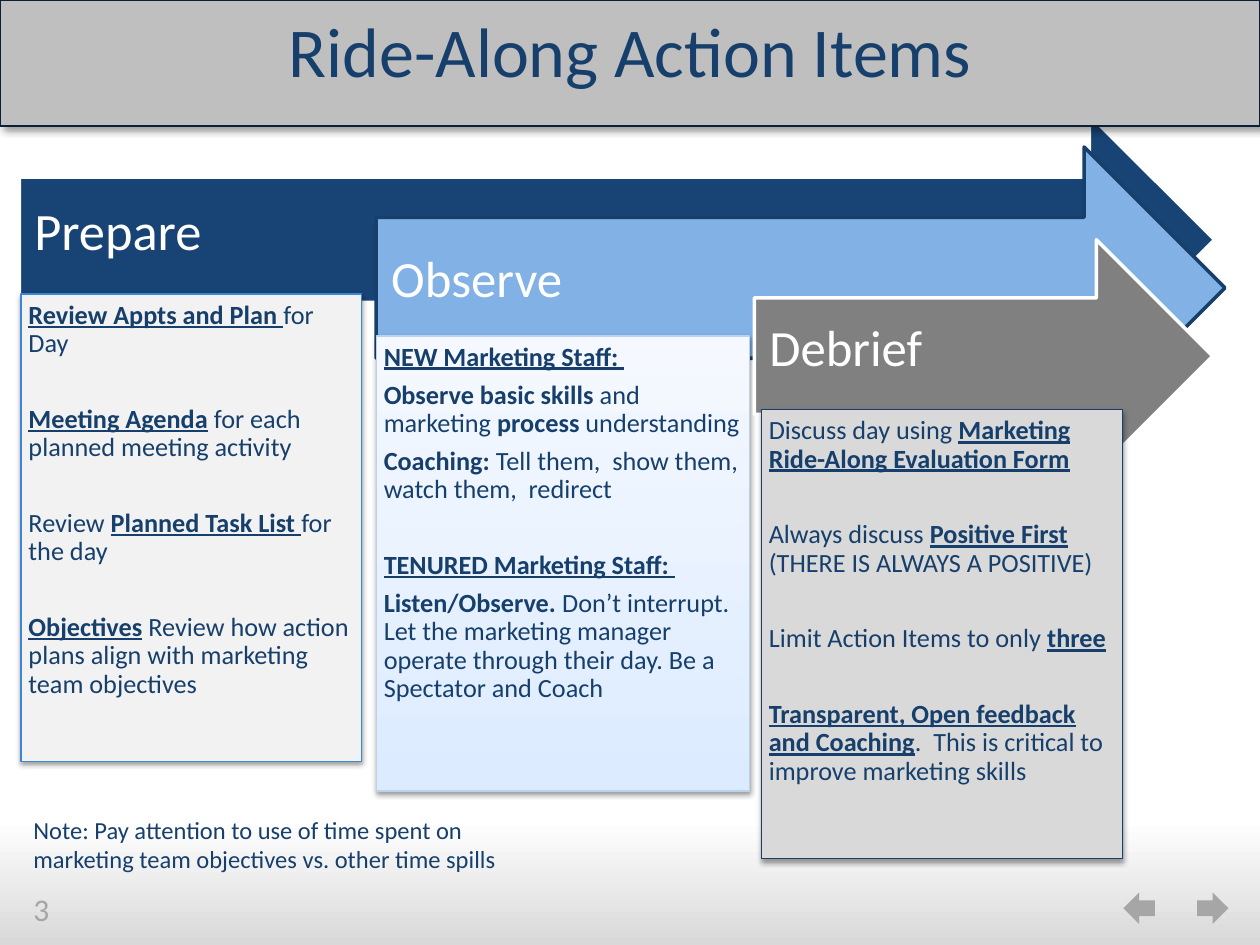
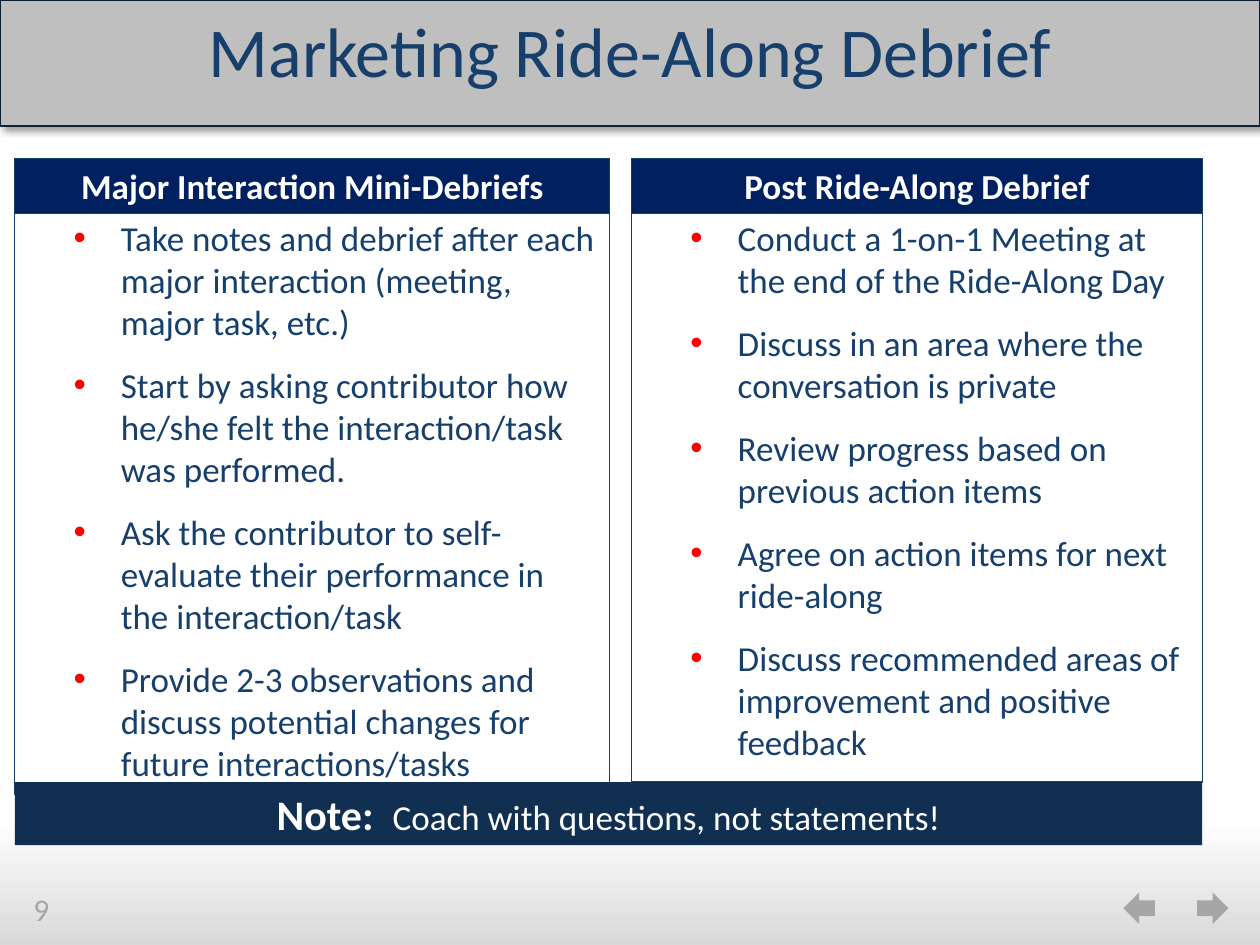
from lxml.etree import SubElement
from pptx import Presentation
from pptx.dml.color import RGBColor
from pptx.enum.shapes import MSO_SHAPE as SHAPE
from pptx.enum.text import MSO_ANCHOR as ANCHOR, PP_ALIGN as ALIGN
from pptx.oxml.ns import qn
from pptx.util import Pt

FONT = "Calibri"
NAVY, WHITE, ARROW_GREY = "163F6C", "FFFFFF", "A6A6A6"
PANEL_SHADOW = (3.1, 1.6, 90, 38)
TITLE_SHADOW = (4, 3, 45, 40)
SMALL_GAP, WIDE_GAP = 5.5, 27


def rgb(value):
    """Turn a hex string into a colour."""
    return RGBColor.from_string(value)


def add_shadow(sp, blur, dist, angle, alpha):
    """Give a shape a black outer shadow."""
    effects = sp._element.spPr.find(qn("a:effectLst"))
    outer = SubElement(effects, qn("a:outerShdw"), blurRad=str(Pt(blur)), dist=str(Pt(dist)),
                       dir=str(angle * 60000), rotWithShape="0")
    color = SubElement(outer, qn("a:srgbClr"), val="000000")
    SubElement(color, qn("a:alpha"), val=str(alpha * 1000))


def add_box(s, kind, box, fill=None, line=None, weight=0.75, shadow=None):
    """Add a preset shape; a pair of fills runs from top to bottom."""
    sp = s.shapes.add_shape(kind, *map(Pt, box))
    sp.shadow.inherit = False
    if isinstance(fill, tuple):
        sp.fill.gradient()
        sp.fill.gradient_angle = 270
        for stop, color in zip(sp.fill.gradient_stops, fill):
            stop.color.rgb = rgb(color)
    elif fill:
        sp.fill.solid()
        sp.fill.fore_color.rgb = rgb(fill)
    else:
        sp.fill.background()
    if line:
        sp.line.color.rgb = rgb(line)
        sp.line.width = Pt(weight)
    else:
        sp.line.fill.background()
    if shadow:
        add_shadow(sp, *shadow)
    return sp


def set_frame(sp, anchor=ANCHOR.TOP, insets=(7.2, 3.6, 7.2, 3.6)):
    """Prepare the text frame of a shape and return it."""
    tf = sp.text_frame
    tf.word_wrap = True
    tf.vertical_anchor = anchor
    tf.margin_left, tf.margin_top, tf.margin_right, tf.margin_bottom = map(Pt, insets)
    return tf


def add_para(tf, runs, size, color=NAVY, align=ALIGN.LEFT, spacing=None, before=0):
    """Write one paragraph from (text, style) runs, where b is bold and u underlined."""
    first = not tf.paragraphs[0].runs
    p = tf.paragraphs[0] if first else tf.add_paragraph()
    p.alignment = align
    p.space_before = Pt(0 if first else before)
    if spacing:
        p.line_spacing = spacing
    for text, style, *own_size in runs:
        r = p.add_run()
        r.text = text
        r.font.name = FONT
        r.font.size = Pt(own_size[0] if own_size else size)
        r.font.color.rgb = rgb(color)
        r.font.bold = "b" in style
        r.font.underline = "u" in style
    return p


def add_bullet(p):
    """Give a paragraph a red hanging bullet."""
    pPr = p._p.get_or_add_pPr()
    pPr.set("marL", str(Pt(53.5)))
    pPr.set("indent", str(Pt(-27)))
    color = SubElement(pPr, qn("a:buClr"))
    SubElement(color, qn("a:srgbClr"), val="FF0000")
    SubElement(pPr, qn("a:buFont"), typeface="Arial")
    SubElement(pPr, qn("a:buChar"), char="•")


def add_footer(s, box, number):
    """Draw the fading band, the page number and the two arrows."""
    x, y, w, h = box
    add_box(s, SHAPE.RECTANGLE, box, (WHITE, "D9D9D9"))
    for kind, dx in ((SHAPE.RIGHT_ARROW, 36), (SHAPE.LEFT_ARROW, 78)):
        add_box(s, kind, (x + w - dx, y + 42, 18, 18), ARROW_GREY)
    tb = s.shapes.add_textbox(*map(Pt, (x + 12, y + 37, 72, 29)))
    add_para(set_frame(tb), [(number, "")], 18, ARROW_GREY)


def add_title(s, box, text):
    """Draw the title band."""
    sp = add_box(s, SHAPE.RECTANGLE, box, "BFBFBF", "0B1F36", shadow=TITLE_SHADOW)
    add_para(set_frame(sp, ANCHOR.MIDDLE), [(text, "")], 40, align=ALIGN.CENTER, spacing=Pt(33))


def add_step(s, box, label, size, arrow, panel, panel_colors, paras):
    """Draw a labelled arrow with its text panel below the shaft."""
    x, y, w, h = box
    sp = add_box(s, SHAPE.RIGHT_ARROW, box, *arrow, weight=2)
    tf = set_frame(sp, ANCHOR.MIDDLE, (8.6, 8.6, 20, 16))
    add_para(tf, [(label, "")], size, WHITE, spacing=0.9)
    dx, dy, pw, ph = panel
    sp = add_box(s, SHAPE.RECTANGLE, (x + dx, y + dy, pw, ph), *panel_colors, shadow=PANEL_SHADOW)
    tf = set_frame(sp, insets=(4.3,) * 4)
    for gap, runs in paras:
        add_para(tf, runs, 15, spacing=0.9, before=gap)


def add_column(s, box, heading, items):
    """Draw a bulleted column under a dark heading."""
    x, y, w, h = box
    body = add_box(s, SHAPE.RECTANGLE, (x, y + 29.5, w, h - 29.5), line=NAVY)
    tf = set_frame(body)
    for item in items:
        add_bullet(add_para(tf, [(item, "")], 20, before=12))
    head = add_box(s, SHAPE.RECTANGLE, (x, y, w, 31.5), "002060", NAVY)
    add_para(set_frame(head), [(heading, "b")], 20, WHITE, ALIGN.CENTER)


def add_note_bar(s, box):
    """Draw the closing bar with the coaching note."""
    sp = add_box(s, SHAPE.RECTANGLE, box, "102F51")
    runs = [("Note:  ", "b", 24), ("Coach with questions, not statements!", "")]
    add_para(set_frame(sp), runs, 20, WHITE, ALIGN.CENTER)


def add_time_note(s, box):
    """Write the remark about time spent."""
    tb = s.shapes.add_textbox(*map(Pt, box))
    text = "Note: Pay attention to use of time spent on marketing team objectives vs. other time spills"
    add_para(set_frame(tb), [(text, "")], 14)


PREPARE = [
    (0, [("Review Appts and Plan ", "bu"), ("for Day", "")]),
    (WIDE_GAP, [("Meeting Agenda", "bu"), (" for each planned meeting activity", "")]),
    (WIDE_GAP, [("Review ", ""), ("Planned Task List ", "bu"), ("for the day", "")]),
    (WIDE_GAP, [("Objectives", "bu"),
                (" Review how action plans align with marketing team objectives", "")]),
]
OBSERVE = [
    (0, [("NEW Marketing Staff: ", "bu")]),
    (SMALL_GAP, [("Observe basic skills ", "b"), ("and marketing ", ""), ("process ", "b"),
                 ("understanding", "")]),
    (SMALL_GAP, [("Coaching: ", "b"), ("Tell them,  show them, watch them,  redirect", "")]),
    (WIDE_GAP, [("TENURED Marketing Staff: ", "bu")]),
    (SMALL_GAP, [("Listen/Observe. ", "b"),
                 ("Don’t interrupt. Let the marketing manager operate through their day. "
                  "Be a Spectator and Coach", "")]),
]
DEBRIEF = [
    (0, [("Discuss day using ", ""), ("Marketing Ride-Along Evaluation Form", "bu")]),
    (WIDE_GAP, [("Always discuss ", ""), ("Positive First ", "bu"),
                ("(THERE IS ALWAYS A POSITIVE)", "")]),
    (WIDE_GAP, [("Limit Action Items to only ", ""), ("three", "bu")]),
    (WIDE_GAP, [("Transparent, Open feedback and Coaching", "bu"),
                (".  This is critical to improve marketing skills", "")]),
]
MINI_DEBRIEFS = [
    "Take notes and debrief after each major interaction (meeting, major task, etc.)",
    "Start by asking contributor how he/she felt the interaction/task was performed.",
    "Ask the contributor to self-evaluate their performance in the interaction/task",
    "Provide 2-3 observations and discuss potential changes for future interactions/tasks",
]
POST_DEBRIEF = [
    "Conduct a 1-on-1 Meeting at the end of the Ride-Along Day",
    "Discuss in an area where the conversation is private",
    "Review progress based on previous action items",
    "Agree on action items for next ride-along",
    "Discuss recommended areas of improvement and positive feedback",
]
FOOTER_BOX, TITLE_BOX = (0, 468, 720, 72), (0, 0, 720, 72)


def build_action_items(s):
    """Build the slide of three overlapping steps."""
    add_footer(s, FOOTER_BOX, "3")
    add_step(s, (11, 65.5, 683, 143), "Prepare", 30, ("184475", WHITE),
             (1, 102.5, 194.5, 267), ("F2F2F2", "3C86D7"), PREPARE)
    add_step(s, (215, 84, 485, 161), "Observe", 29, ("81B1E5", NAVY),
             (0, 108, 213.5, 260), (("F5F9FF", "DCEBFF"), "BAD2EE"), OBSERVE)
    add_step(s, (431, 137, 262, 133), "Debrief", 29, ("808080", WHITE),
             (4, 97, 206.5, 256.5), ("D9D9D9", NAVY), DEBRIEF)
    add_title(s, TITLE_BOX, "Ride-Along Action Items")
    add_time_note(s, (12, 462, 312, 58))


def build_debrief(s):
    """Build the slide of two debrief columns."""
    add_footer(s, FOOTER_BOX, "9")
    add_column(s, (361, 90.5, 326, 356.5), "Post Ride-Along Debrief", POST_DEBRIEF)
    add_column(s, (8.5, 90.5, 340, 363.5), "Major Interaction Mini-Debriefs", MINI_DEBRIEFS)
    add_title(s, TITLE_BOX, "Marketing Ride-Along Debrief")
    add_note_bar(s, (8.5, 447, 678.5, 36))


def main():
    """Build and save the presentation."""
    prs = Presentation()
    prs.slide_width, prs.slide_height = Pt(720), Pt(540)
    for build in (build_action_items, build_debrief):
        build(prs.slides.add_slide(prs.slide_layouts[6]))
    prs.save("out.pptx")


if __name__ == "__main__":
    main()
